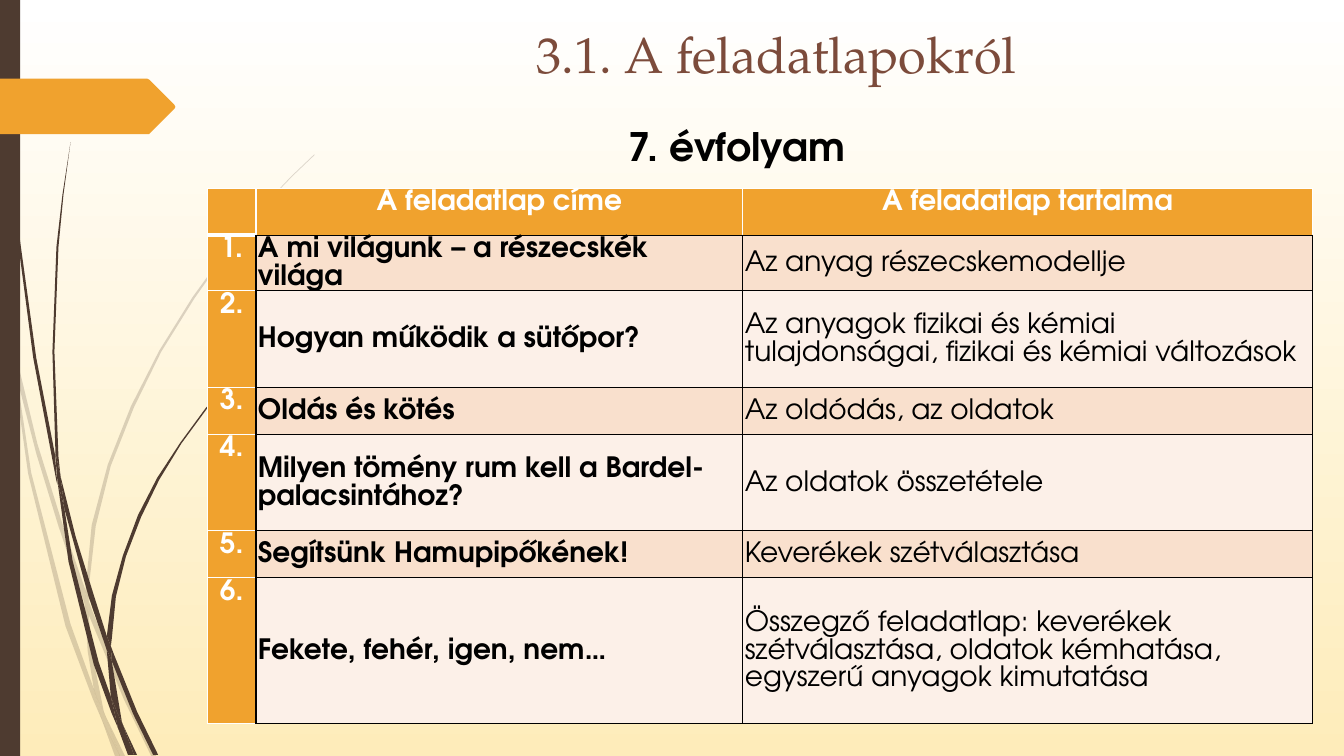
import dataclasses
import typing

import lxml.etree
import pptx
import pptx.dml.color
import pptx.enum.shapes
import pptx.enum.text
import pptx.oxml.ns
import pptx.util

Cm = pptx.util.Cm
qn = pptx.oxml.ns.qn
ALIGN = pptx.enum.text.PP_ALIGN
ANCHOR = pptx.enum.text.MSO_ANCHOR


@dataclasses.dataclass(frozen=True)
class Theme:
    brown: str = "4E3B30"
    rust: str = "7C4B3B"
    gold: str = "F0A22E"
    peach: str = "F9E0CD"
    cream: str = "FCF0E8"
    sand: str = "FEECBA"
    white: str = "FFFFFF"
    black: str = "000000"
    serif: str = "TeX Gyre Pagella"
    sans: str = "TeX Gyre Adventor"
    title: int = 36
    sub: int = 28
    cell: int = 20


@dataclasses.dataclass(frozen=True)
class Sheet:
    name: str
    topic: str
    height: float


@dataclasses.dataclass(frozen=True)
class Look:
    fill: str
    color: str
    bold: bool
    align: ALIGN
    anchor: ANCHOR
    edges: dict[str, tuple[str, int]]


@dataclasses.dataclass(frozen=True)
class Tuft:
    """Grass blades: each outline is x, y, x, y, ... in hundredths of an inch."""
    alpha: int
    blades: tuple[tuple[int, ...], ...]


THEME = Theme()
UNIT = Cm(2.54) / 100

SHEETS = (
    Sheet("A mi világunk – a részecskék világa", "Az anyag részecskemodellje", 1.19),
    Sheet("Hogyan működik a sütőpor?",
          "Az anyagok fizikai és kémiai tulajdonságai, fizikai és kémiai változások", 2.44),
    Sheet("Oldás és kötés", "Az oldódás, az oldatok", 1.18),
    Sheet("Milyen tömény rum kell a Bardel-palacsintához?", "Az oldatok összetétele", 2.43),
    Sheet("Segítsünk Hamupipőkének!", "Keverékek szétválasztása", 1.18),
    Sheet("Fekete, fehér, igen, nem…",
          "Összegző feladatlap: keverékek szétválasztása, oldatok kémhatása, "
          "egyszerű anyagok kimutatása", 3.67),
)

PALE = Tuft(20, (
    (11, 350, 9, 322, 0, 282, 0, 299, 10, 344),
    (58, 522, 84, 599, 85, 586, 62, 520, 37, 440, 14, 345, 17, 376, 36, 450),
    (92, 607, 88, 596, 88, 610, 123, 694, 150, 750, 155, 750, 127, 692),
    (119, 750, 124, 750, 105, 711),
    (93, 683, 70, 619, 31, 469, 17, 376, 11, 350, 28, 470, 65, 621, 92, 693,
     101, 714, 99, 707),
    (84, 599, 87, 646, 93, 683, 96, 692, 105, 711, 103, 706, 91, 646, 88, 610, 88, 608),
    (88, 584, 95, 522, 110, 462, 133, 404, 160, 349, 193, 296, 229, 245, 268, 198,
     290, 175, 312, 154, 312, 153, 289, 175, 268, 197, 228, 244, 191, 295, 158, 348,
     130, 403, 107, 461, 91, 521, 85, 584, 85, 586, 88, 596),
    (101, 714, 114, 750, 119, 750),
    (88, 608, 88, 610, 88, 596, 85, 586, 84, 599),
    (96, 692, 93, 683, 99, 707, 101, 714, 119, 750, 105, 711),
))

DARK = Tuft(100, (
    (7, 110, 17, 233, 33, 355, 56, 477, 57, 481, 55, 457, 55, 453, 36, 355, 19, 232,
     8, 109, 5, 48, 4, 0, 3, 0, 4, 48),
    (88, 592, 106, 645, 106, 633, 106, 631, 93, 590, 75, 532, 60, 472, 64, 505),
    (113, 649, 110, 641, 111, 656, 132, 708, 152, 749, 157, 749, 136, 706),
    (110, 691, 98, 657, 72, 556, 64, 505, 57, 477, 68, 557, 93, 659, 111, 708,
     117, 722, 116, 717),
    (60, 472, 58, 453, 54, 349, 58, 245, 63, 193, 70, 141, 62, 193, 56, 245,
     52, 349, 55, 449),
    (133, 749, 136, 749, 122, 719),
    (57, 477, 64, 505, 60, 472, 55, 449, 55, 453),
    (111, 633, 115, 592, 125, 552, 140, 513, 158, 476, 180, 440, 205, 406, 231, 374,
     245, 359, 261, 344, 260, 344, 245, 358, 231, 373, 204, 405, 179, 439, 156, 474,
     137, 511, 122, 551, 111, 591, 106, 631, 110, 641),
    (117, 722, 127, 749, 131, 749),
    (106, 645, 110, 691, 116, 706, 122, 719, 121, 716, 111, 656, 109, 651),
    (106, 645, 109, 651, 111, 656, 110, 641, 106, 631, 106, 633),
    (116, 706, 110, 691, 116, 717, 117, 722, 130, 749, 133, 749, 122, 719),
))

ARROW = (0, 78, 146, 78, 148, 79, 173, 104, 174, 106, 173, 108, 148, 133, 146, 133, 0, 133)


def rgb(code: str) -> pptx.dml.color.RGBColor:
    return pptx.dml.color.RGBColor.from_string(code)


def apply(target: typing.Any, values: dict[str, typing.Any]) -> None:
    for key, value in values.items():
        setattr(target, key, value)


def paint(shape: typing.Any, color: str) -> None:
    shape.shadow.inherit = False
    shape.fill.solid()
    shape.fill.fore_color.rgb = rgb(color)
    shape.line.fill.background()


def outline(shapes: typing.Any, flat: tuple[int, ...], color: str) -> typing.Any:
    points = list(zip(flat[::2], flat[1::2]))
    pen = shapes.build_freeform(*points[0], scale=UNIT)
    pen.add_line_segments(points[1:], close=True)
    shape = pen.convert_to_shape()
    paint(shape, color)
    return shape


def grow(shapes: typing.Any, tuft: Tuft) -> None:
    """Draw a tuft of grass as one group."""
    group = shapes.add_group_shape()
    for blade in tuft.blades:
        shape = outline(group.shapes, blade, THEME.brown)
        if tuft.alpha < 100:
            tint = shape._element.spPr.find(".//" + qn("a:srgbClr"))
            lxml.etree.SubElement(tint, qn("a:alpha"), val=str(tuft.alpha * 1000))


def write(frame: typing.Any, text: str, color: str, font: dict[str, typing.Any],
          para: dict[str, typing.Any]) -> None:
    line = frame.paragraphs[0]
    apply(line, para)
    run = line.add_run()
    run.text = text
    apply(run.font, font)
    run.font.color.rgb = rgb(color)


def dress(cell: typing.Any, text: str, look: Look) -> None:
    """Give a table cell its borders, fill and text."""
    props = cell._tc.get_or_add_tcPr()
    for side in "LRTB":
        color, width = look.edges.get(side, (THEME.black, 1))
        edge = lxml.etree.SubElement(props, qn("a:ln" + side), w=str(pptx.util.Pt(width)))
        solid = lxml.etree.SubElement(edge, qn("a:solidFill"))
        lxml.etree.SubElement(solid, qn("a:srgbClr"), val=color)
    cell.fill.solid()
    cell.fill.fore_color.rgb = rgb(look.fill)
    apply(cell, {"margin_left": Cm(0.05), "margin_right": Cm(0.05), "margin_top": 0,
                 "margin_bottom": 0, "vertical_anchor": look.anchor})
    if text:
        font = {"name": THEME.sans, "size": pptx.util.Pt(THEME.cell), "bold": look.bold}
        write(cell.text_frame, text, look.color, font,
              {"alignment": look.align, "line_spacing": 1.07})


def tabulate(shapes: typing.Any) -> None:
    widths = (1.22, 12.27, 14.35)
    heights = (1.18, *(sheet.height for sheet in SHEETS))
    table = shapes.add_table(len(heights), len(widths), Cm(5.23), Cm(4.75),
                             Cm(sum(widths)), Cm(sum(heights))).table
    for column, width in zip(table.columns, widths):
        column.width = Cm(width)
    for row, height in zip(table.rows, heights):
        row.height = Cm(height)

    thin = (THEME.white, 1)
    head = Look(THEME.gold, THEME.white, True, ALIGN.CENTER, ANCHOR.TOP,
                {"L": thin, "T": thin, "R": thin})
    corner = dataclasses.replace(head, edges=head.edges | {"B": (THEME.white, 3)})
    index = dataclasses.replace(head, edges={"L": thin, "T": thin, "B": thin})
    for col, text in enumerate(("", "A feladatlap címe", "A feladatlap tartalma")):
        dress(table.cell(0, col), text, head if col else corner)
    for row, sheet in enumerate(SHEETS, 1):
        fill = THEME.peach if row % 2 else THEME.cream
        name = Look(fill, THEME.black, True, ALIGN.LEFT, ANCHOR.MIDDLE, {})
        dress(table.cell(row, 0), f"{row}.", index)
        dress(table.cell(row, 1), sheet.name, name)
        dress(table.cell(row, 2), sheet.topic, dataclasses.replace(name, bold=False))


def main() -> None:
    deck = pptx.Presentation()
    apply(deck, {"slide_width": Cm(33.87), "slide_height": Cm(19.05)})
    slide = deck.slides.add_slide(deck.slide_layouts[5])
    back = slide.background.fill
    back.gradient()
    back.gradient_angle = 270
    for stop, color in zip(back.gradient_stops, (THEME.white, THEME.sand)):
        stop.color.rgb = rgb(color)

    shapes = slide.shapes
    for tuft in (PALE, DARK):
        grow(shapes, tuft)
    stem = shapes.add_shape(pptx.enum.shapes.MSO_SHAPE.RECTANGLE, 0, 0, Cm(0.51), Cm(19.05))
    paint(stem, THEME.brown)
    outline(shapes, ARROW, THEME.gold)

    title = shapes.title
    apply(title, {"left": Cm(9.17), "top": Cm(0.46), "width": Cm(20.8), "height": Cm(2.29)})
    apply(title.text_frame, {"vertical_anchor": ANCHOR.TOP, "word_wrap": True})
    write(title.text_frame, "3.1. A feladatlapokról", THEME.rust,
          {"name": THEME.serif, "size": pptx.util.Pt(THEME.title)},
          {"alignment": ALIGN.CENTER})

    tabulate(shapes)
    grade = shapes.add_textbox(Cm(15.6), Cm(2.95), Cm(6.53), Cm(1.45)).text_frame
    grade.word_wrap = True
    write(grade, "7. évfolyam", THEME.black,
          {"name": THEME.sans, "size": pptx.util.Pt(THEME.sub), "bold": True}, {})
    deck.save("out.pptx")


if __name__ == "__main__":
    main()
